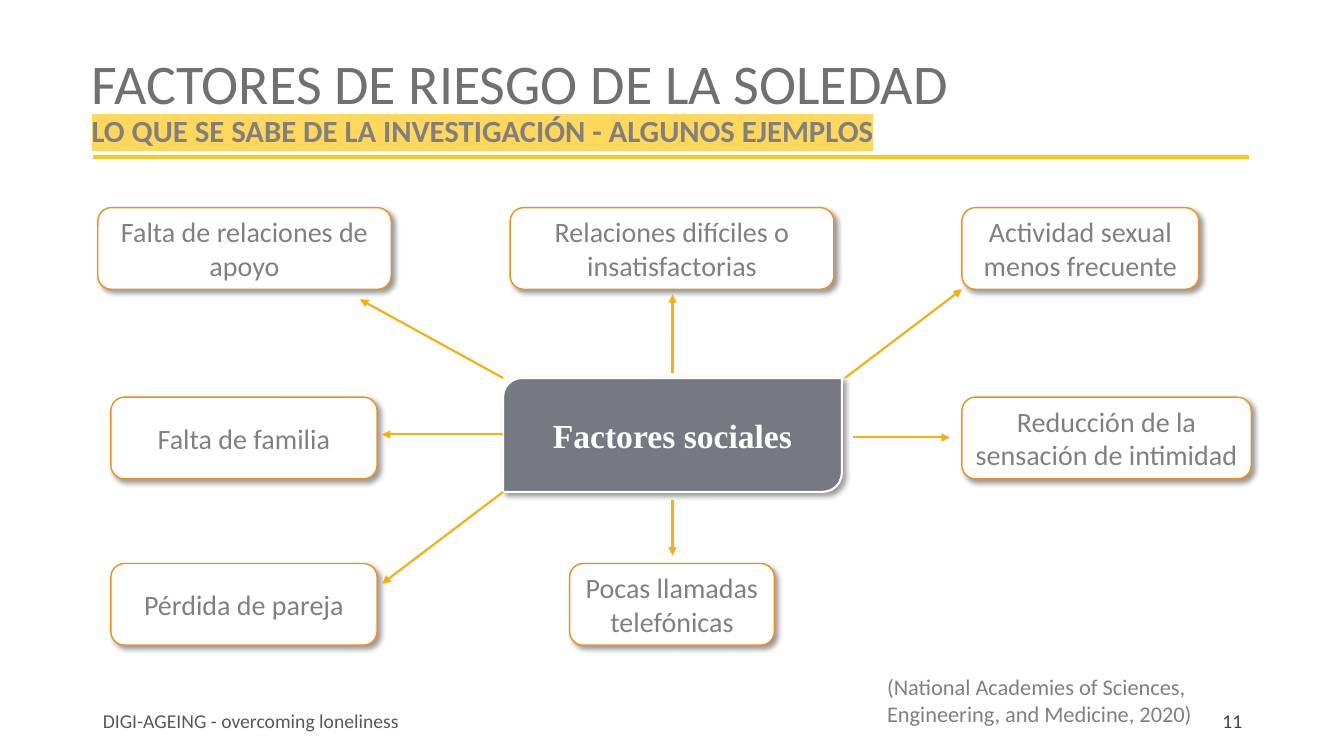
from lxml import etree
from pptx import Presentation
from pptx.dml.color import RGBColor
from pptx.enum import shapes, text
from pptx.oxml import parse_xml
from pptx.oxml.ns import nsdecls, qn
from pptx.util import Inches, Pt

WHITE = RGBColor(0xFF, 0xFF, 0xFF)
GRAY = RGBColor(0x80, 0x80, 0x80)
TITLE = RGBColor(0x70, 0x70, 0x70)
FOOT = RGBColor(0x59, 0x59, 0x59)
NUMBER = RGBColor(0x40, 0x40, 0x40)
SLATE = RGBColor(0x76, 0x79, 0x82)
ORANGE = RGBColor(0xF3, 0x90, 0x19)
AMBER = RGBColor(0xFF, 0xAC, 0x06)
GOLD = RGBColor(0xFF, 0xC7, 0x15)
MARK = RGBColor(0xFF, 0xD8, 0x5B)

SHADOW = f"""<a:outerShdw {nsdecls('a')} blurRad="{Pt(4)}" dist="{Pt(3)}"
 dir="2700000" algn="tl" rotWithShape="0">
 <a:srgbClr val="000000"><a:alpha val="40000"/></a:srgbClr></a:outerShdw>"""

deck = Presentation()
deck.slide_width, deck.slide_height = Inches(13.33), Inches(7.5)
slide = deck.slides.add_slide(deck.slide_layouts[6])
items = slide.shapes


def write(shape, words, size, color, align=text.PP_ALIGN.LEFT, font="Calibri",
          bold=False, anchor=text.MSO_ANCHOR.MIDDLE):
    frame = shape.text_frame
    frame.text = words
    frame.word_wrap = True
    frame.vertical_anchor = anchor
    for para in frame.paragraphs:
        para.alignment = align
        for run in para.runs:
            run.font.name = font
            run.font.size = Pt(size)
            run.font.bold = bold
            run.font.color.rgb = color
    return frame


def link(start, end, color, width):
    """Draw a straight line without shadow and return its line element."""
    line = items.add_connector(shapes.MSO_CONNECTOR.STRAIGHT,
                               *map(Inches, start + end))
    line.line.color.rgb = color
    line.line.width = Pt(width)
    props = line._element.spPr
    etree.SubElement(props, qn("a:effectLst"))
    return props.find(qn("a:ln"))


# Heading, rule and footer
link((0.92, 1.56), (12.39, 1.56), GOLD, 3)
head = items.add_textbox(*map(Inches, (0.81, 0.47, 11.85, 1.1)))
frame = write(head, "FACTORES DE RIESGO DE LA SOLEDAD\v"
              "LO QUE SE SABE DE LA INVESTIGACIÓN - ALGUNOS EJEMPLOS", 40, TITLE)
para = frame.paragraphs[0]
para.line_spacing = 0.9
sub = para.runs[1]
sub.font.size = Pt(22)
sub.font.bold = True
sub.font.color.rgb = GRAY
mark = parse_xml(f'<a:highlight {nsdecls("a")}><a:srgbClr val="{MARK}"/></a:highlight>')
sub._r.rPr.find(qn("a:solidFill")).addnext(mark)

foot = items.add_textbox(*map(Inches, (0.94, 6.95, 7.45, 0.39)))
frame = write(foot, "DIGI-AGEING - overcoming loneliness", 14, FOOT)
frame.margin_left = frame.margin_right = Inches(0.08)
frame.margin_top = frame.margin_bottom = Inches(0.08)
page = items.add_textbox(*map(Inches, (9.42, 6.95, 3, 0.4)))
write(page, "11", 14, NUMBER, text.PP_ALIGN.RIGHT)
cite = items.add_textbox(*map(Inches, (8.7, 6.63, 3.36, 0.64)))
write(cite, "(National Academies of Sciences,\nEngineering, and Medicine, 2020)",
      16, GRAY, anchor=text.MSO_ANCHOR.TOP)

# Central topic and the factors around it
ROUND = shapes.MSO_SHAPE.ROUNDED_RECTANGLE
CORE = shapes.MSO_SHAPE.ROUND_2_DIAG_RECTANGLE
TOP, MID, LOW = 2.06, 3.94, 5.59
HIGH = 0.81
boxes = [
    (CORE, 4.99, 3.75, 3.36, 1.13, "Factores sociales"),
    (ROUND, 0.97, TOP, 2.91, HIGH, "Falta de relaciones de apoyo"),
    (ROUND, 5.06, TOP, 3.21, HIGH, "Relaciones difíciles o insatisfactorias"),
    (ROUND, 9.54, TOP, 2.35, HIGH, "Actividad sexual menos frecuente"),
    (ROUND, 9.54, MID, 2.87, HIGH, "Reducción de la sensación de intimidad"),
    (ROUND, 1.1, MID, 2.64, HIGH, "Falta de familia"),
    (ROUND, 1.1, LOW, 2.64, HIGH, "Pérdida de pareja"),
    (ROUND, 5.65, LOW, 2.03, HIGH, "Pocas llamadas telefónicas"),
]
for kind, *place, words in boxes:
    core = kind == CORE
    box = items.add_shape(kind, *map(Inches, place))
    box.fill.solid()
    box.fill.fore_color.rgb = SLATE if core else WHITE
    box.line.color.rgb = WHITE if core else ORANGE
    box.line.width = Pt(1.5 if core else 1)
    box.shadow.inherit = False
    box._element.spPr.find(qn("a:effectLst")).append(parse_xml(SHADOW))
    if core:
        write(box, words, 24, WHITE, text.PP_ALIGN.CENTER, "Times New Roman", True)
    else:
        frame = write(box, words, 20, GRAY, text.PP_ALIGN.CENTER)
        frame.margin_left = frame.margin_right = Inches(0.06)

# Arrows from the topic to each factor
arrows = [
    ((4.99, 3.75), (3.57, 2.97)),
    ((4.99, 4.31), (3.79, 4.31)),
    ((4.99, 4.88), (3.79, 5.79)),
    ((6.67, 4.96), (6.67, 5.51)),
    ((8.46, 4.34), (9.42, 4.34)),
    ((8.38, 3.75), (9.54, 2.87)),
    ((6.67, 3.7), (6.67, 2.92)),
]
for start, end in arrows:
    line = link(start, end, AMBER, 1.5)
    etree.SubElement(line, qn("a:tailEnd"), type="triangle")

deck.save("out.pptx")
